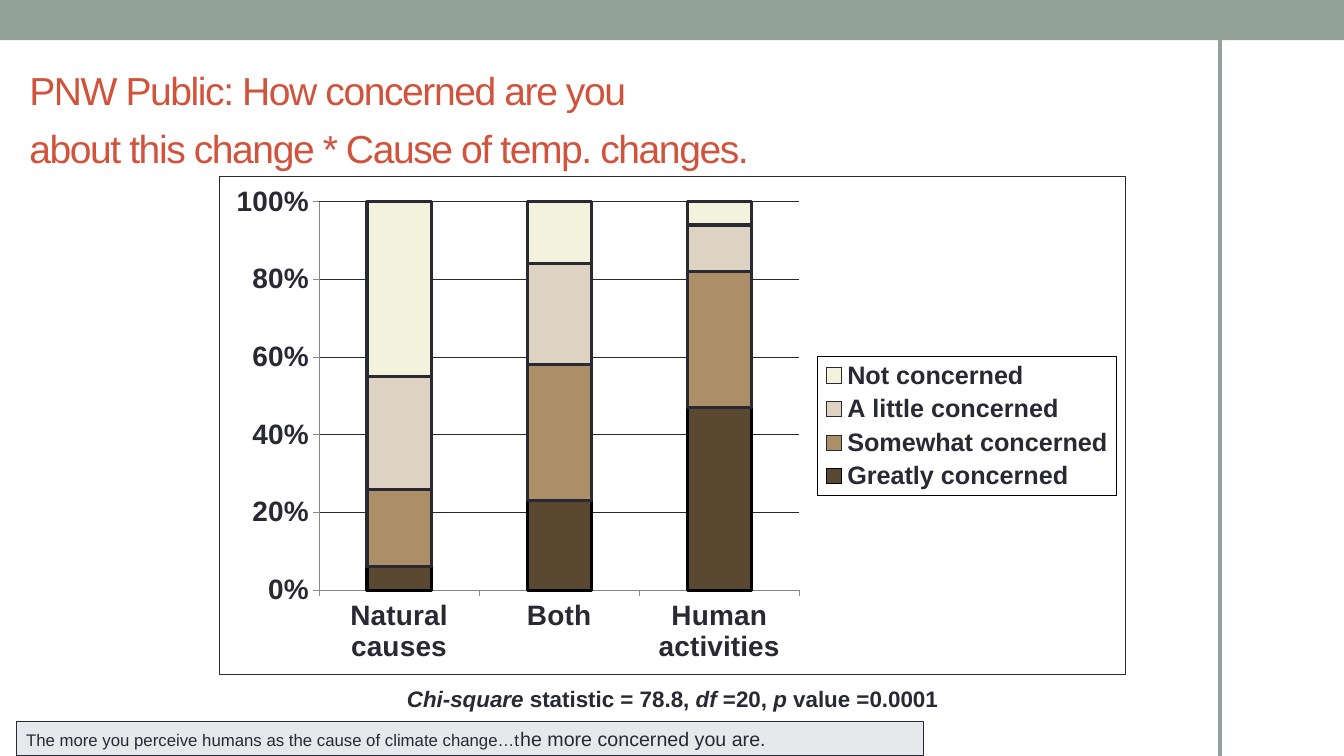
import copy
from dataclasses import dataclass

import lxml.etree
import pptx
import pptx.chart.data
import pptx.dml.color
import pptx.enum.chart
import pptx.enum.shapes
import pptx.enum.text
import pptx.oxml
import pptx.oxml.ns
import pptx.util

qn = pptx.oxml.ns.qn


@dataclass(frozen=True)
class Theme:
    font: str = "Arial"
    sage: str = "93A299"
    heading: str = "D2533C"
    ink: str = "292934"
    black: str = "000000"
    white: str = "FFFFFF"
    axis: str = "878787"
    note: str = "E6E8EC"
    title_size: float = 27.9
    title_pitch: float = 41.4
    axis_size: float = 20
    legend_size: float = 18
    caption_size: float = 16
    emphasis_size: float = 14
    note_size: float = 12
    hairline: float = 0.75
    bar_line: float = 2.25
    rail_line: float = 3.25


THEME = Theme()
WIDTH = pptx.util.Inches(13.33)
HEIGHT = pptx.util.Inches(7.5)
CAUSES = ["Natural causes", "Both", "Human activities"]
CONCERN = [
    ("Greatly concerned", (0.06, 0.23, 0.47), "5A4830", THEME.black),
    ("Somewhat concerned", (0.2, 0.35, 0.35), "AD8F67", THEME.ink),
    ("A little concerned", (0.29, 0.26, 0.12), "DED2C2", THEME.ink),
    ("Not concerned", (0.46, 0.17, 0.06), "F3F2DC", THEME.ink),
]


def place(left, top, width, height):
    return (int(WIDTH * left / 100), int(HEIGHT * top / 100),
            int(WIDTH * width / 100), int(HEIGHT * height / 100))


def rgb(color):
    return pptx.dml.color.RGBColor.from_string(color)


def style_font(font, size, color=THEME.ink, bold=None):
    font.name = THEME.font
    font.size = pptx.util.Pt(size)
    font.color.rgb = rgb(color)
    font.bold = bold


def style_line(line, color, width):
    line.color.rgb = rgb(color)
    line.width = pptx.util.Pt(width)


def paint(format_, fill, border, width):
    format_.fill.solid()
    format_.fill.fore_color.rgb = rgb(fill)
    style_line(format_.line, border, width)


def add_panel(slide, area, fill, border=None):
    panel = slide.shapes.add_shape(
        pptx.enum.shapes.MSO_SHAPE.RECTANGLE, *place(*area))
    panel.shadow.inherit = False
    paint(panel, fill, border or fill, THEME.hairline)
    if border is None:
        panel.line.fill.background()
    return panel


def add_rail(slide, column, top):
    x, y, _, length = place(column, top, 0, 100 - top)
    rail = slide.shapes.add_connector(
        pptx.enum.shapes.MSO_CONNECTOR.STRAIGHT, x, y, x, y + length)
    style_line(rail.line, THEME.sage, THEME.rail_line)
    lxml.etree.SubElement(rail._element.spPr, qn("a:effectLst"))


def set_title(slide, text, area):
    title = slide.shapes.title
    title.left, title.top, title.width, title.height = place(*area)
    frame = title.text_frame
    frame.auto_size = pptx.enum.text.MSO_AUTO_SIZE.NONE
    frame.vertical_anchor = pptx.enum.text.MSO_ANCHOR.MIDDLE
    frame.text = text
    heading = frame.paragraphs[0]
    heading.alignment = pptx.enum.text.PP_ALIGN.LEFT
    heading.line_spacing = pptx.util.Pt(THEME.title_pitch)
    style_font(heading.font, THEME.title_size, THEME.heading)
    for run in heading.runs:
        run._r.get_or_add_rPr().set("spc", "-100")


def set_layout(parent, position, x, y, w, h, inner=False):
    for existing in parent.findall(qn("c:layout")):
        parent.remove(existing)
    layout = lxml.etree.Element(qn("c:layout"))
    manual = lxml.etree.SubElement(layout, qn("c:manualLayout"))
    settings = [("xMode", "edge"), ("yMode", "edge"),
                ("x", x), ("y", y), ("w", w), ("h", h)]
    if inner:
        settings.insert(0, ("layoutTarget", "inner"))
    for tag, value in settings:
        lxml.etree.SubElement(manual, qn("c:" + tag)).set("val", str(value))
    parent.insert(position, layout)


def outline(color):
    return pptx.oxml.parse_xml(
        f'<c:spPr {pptx.oxml.ns.nsdecls("c", "a")}>'
        f'<a:solidFill><a:srgbClr val="{THEME.white}"/></a:solidFill>'
        f'<a:ln w="{pptx.util.Pt(THEME.hairline)}"><a:solidFill>'
        f'<a:srgbClr val="{color}"/></a:solidFill></a:ln></c:spPr>')


def style_axis(axis):
    axis.major_tick_mark = pptx.enum.chart.XL_TICK_MARK.OUTSIDE
    style_font(axis.tick_labels.font, THEME.axis_size, bold=True)
    style_line(axis.format.line, THEME.axis, THEME.hairline)


def style_legend(chart):
    chart.has_legend = True
    legend = chart.legend
    legend.position = pptx.enum.chart.XL_LEGEND_POSITION.RIGHT
    legend.include_in_layout = False
    style_font(legend.font, THEME.legend_size, bold=True)
    element = legend._element
    set_layout(element, 1, 0.66, 0.36, 0.33, 0.28)
    element.find(qn("c:overlay")).addnext(outline(THEME.black))


def add_concern_chart(slide, area):
    data = pptx.chart.data.CategoryChartData(number_format="0%")
    data.categories = CAUSES
    for level, shares, _, _ in CONCERN:
        data.add_series(level, shares)
    chart = slide.shapes.add_chart(
        pptx.enum.chart.XL_CHART_TYPE.COLUMN_STACKED, *place(*area), data).chart
    chart.has_title = False
    style_font(chart.font, 10)
    plot = chart.plots[0]
    plot.gap_width, plot.overlap = 150, 100
    plot.vary_by_categories = False
    for series, (_, _, fill, border) in zip(plot.series, CONCERN):
        paint(series.format, fill, border, THEME.bar_line)
    style_axis(chart.category_axis)
    shares_axis = chart.value_axis
    style_axis(shares_axis)
    shares_axis.minimum_scale, shares_axis.maximum_scale = 0, 1
    shares_axis.major_unit = 0.2
    shares_axis.tick_labels.number_format = "0%"
    shares_axis.tick_labels.number_format_is_linked = False
    shares_axis.has_major_gridlines = True
    style_line(shares_axis.major_gridlines.format.line, THEME.ink, THEME.hairline)
    style_legend(chart)
    root = chart._chartSpace
    set_layout(root.chart.plotArea, 0, 0.11, 0.05, 0.53, 0.78, inner=True)
    root.chart.addnext(outline(THEME.ink))


def add_caption(slide, area, phrases):
    frame = slide.shapes.add_textbox(*place(*area)).text_frame
    frame.word_wrap = True
    caption = frame.paragraphs[0]
    caption.alignment = pptx.enum.text.PP_ALIGN.CENTER
    style_font(caption.font, THEME.caption_size, bold=True)
    for text, italic in phrases:
        run = caption.add_run()
        run.text = text
        run.font.italic = italic


def add_note(slide, area, phrases):
    frame = add_panel(slide, area, THEME.note, THEME.ink).text_frame
    frame.word_wrap = True
    frame.vertical_anchor = pptx.enum.text.MSO_ANCHOR.TOP
    note = frame.paragraphs[0]
    note.alignment = pptx.enum.text.PP_ALIGN.LEFT
    for text, size in phrases:
        run = note.add_run()
        run.text = text
        style_font(run.font, size)


def main():
    deck = pptx.Presentation()
    deck.slide_width, deck.slide_height = WIDTH, HEIGHT
    slide = deck.slides.add_slide(deck.slide_layouts[5])
    add_panel(slide, (0, 0, 100, 5.33), THEME.sage)
    add_rail(slide, 90.77, 5.07)
    set_title(slide, "PNW Public: How concerned are you \vabout this change * "
              "Cause of temp. changes.", (1.43, 7.73, 79.52, 14.4))
    add_concern_chart(slide, (16.28, 23.33, 67.52, 66))
    add_note(slide, (1.2, 95.47, 67.52, 4.53), [
        ("The more you perceive humans as the cause of climate change…t",
         THEME.note_size),
        ("he more concerned you are.", THEME.emphasis_size)])
    add_caption(slide, (28.28, 90, 43.51, 5.6), [
        ("Chi-square ", True), ("statistic = 78.8, ", False), ("df", True),
        (" =20, ", False), ("p", True), (" value =0.0001", False)])
    deck.save("out.pptx")


if __name__ == "__main__":
    main()
